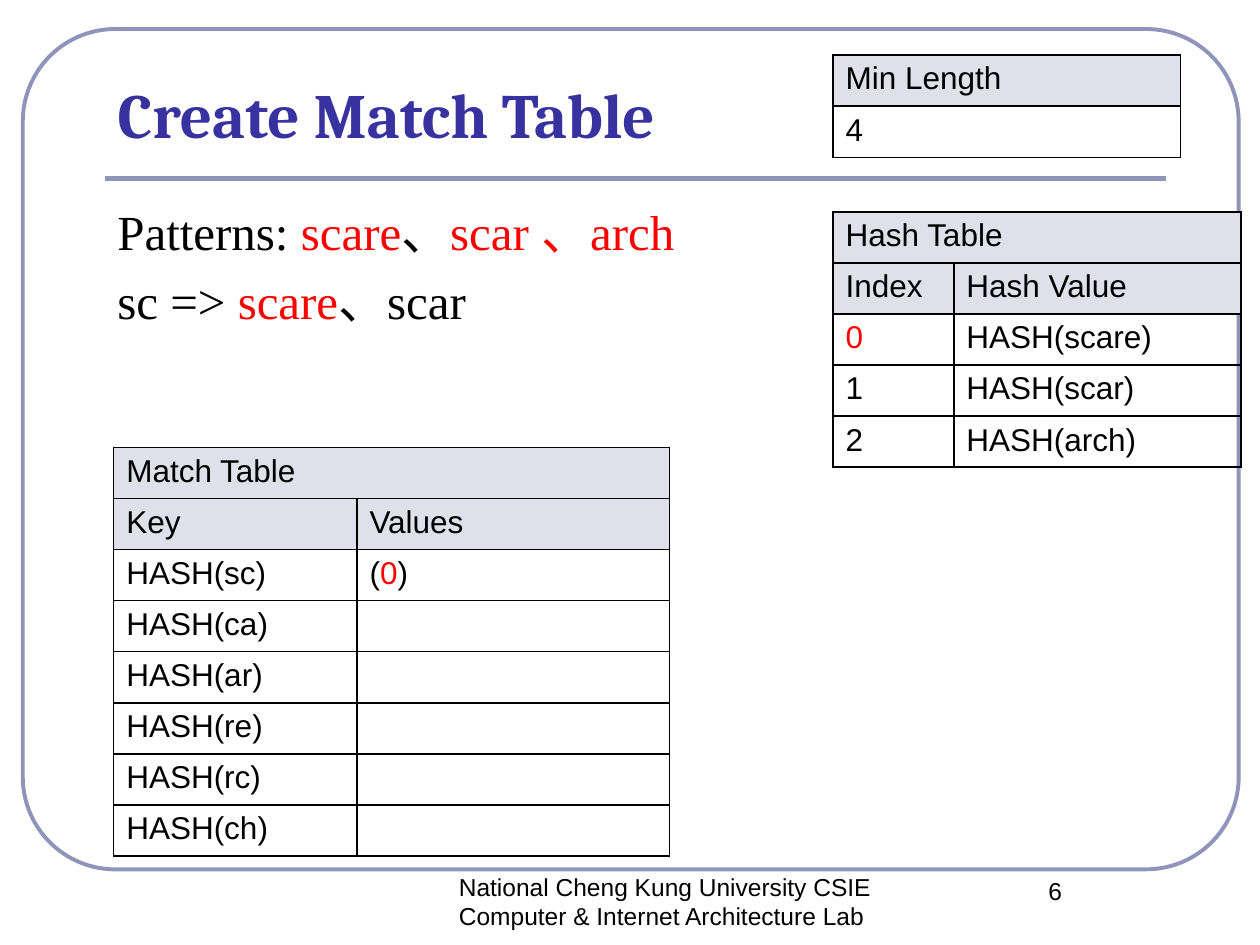
from lxml.etree import SubElement
from pptx import Presentation
from pptx.dml.color import RGBColor
from pptx.enum.shapes import MSO_CONNECTOR, MSO_SHAPE
from pptx.enum.text import MSO_ANCHOR, MSO_AUTO_SIZE, PP_ALIGN
from pptx.oxml.ns import qn
from pptx.util import Pt

BLACK, RED, INDIGO, FRAME, HEADER = "000000", "FF0000", "3732A0", "9094B8", "E0E0EB"
ROW_HEIGHT = 29.2


def color(value):
    return RGBColor.from_string(value)


def box_pt(box):
    return [Pt(v) for v in box]


def add_runs(p, parts, size, font):
    """Fill a paragraph from plain text or a list of (text, colour) pairs."""
    if isinstance(parts, str):
        parts = [(parts, BLACK)]
    for text, fill in parts:
        r = p.add_run()
        r.text = text
        r.font.size = Pt(size)
        r.font.name = font
        r.font.color.rgb = color(fill)


def add_frame(s, box):
    sp = s.shapes.add_shape(MSO_SHAPE.ROUNDED_RECTANGLE, *box_pt(box))
    sp.adjustments[0] = 0.11
    sp.shadow.inherit = False
    sp.fill.background()
    sp.line.color.rgb = color(FRAME)
    sp.line.width = Pt(2.25)


def add_rule(s, left, right, y):
    line = s.shapes.add_connector(MSO_CONNECTOR.STRAIGHT, Pt(left), Pt(y), Pt(right), Pt(y))
    line.line.color.rgb = color(FRAME)
    line.line.width = Pt(3)
    SubElement(line._element.spPr, qn("a:effectLst"))


def set_title(s, box, text):
    title = s.shapes.title
    title.left, title.top, title.width, title.height = box_pt(box)
    tf = title.text_frame
    tf.text = text
    tf.auto_size = MSO_AUTO_SIZE.NONE
    tf.vertical_anchor = MSO_ANCHOR.BOTTOM
    p = tf.paragraphs[0]
    p.alignment = PP_ALIGN.LEFT
    font = p.runs[0].font
    font.name, font.size, font.bold = "Cambria", Pt(36), True
    font.color.rgb = color(INDIGO)


def add_text(s, box, lines, size, font, align=PP_ALIGN.LEFT, space_before=0):
    tf = s.shapes.add_textbox(*box_pt(box)).text_frame
    tf.word_wrap = True
    for i, parts in enumerate(lines):
        p = tf.add_paragraph() if i else tf.paragraphs[0]
        p.alignment = align
        p.space_before = Pt(space_before)
        add_runs(p, parts, size, font)


def add_borders(cell):
    tc_pr = cell._tc.get_or_add_tcPr()
    for side in ("lnL", "lnR", "lnT", "lnB"):
        ln = SubElement(tc_pr, qn(f"a:{side}"), w=str(Pt(1)))
        fill = SubElement(ln, qn("a:solidFill"))
        SubElement(fill, qn("a:srgbClr"), val=BLACK)


def add_grid(s, left, top, widths, rows, header_rows):
    """Place a bordered table; a short first row spans all columns."""
    table = s.shapes.add_table(len(rows), len(widths), Pt(left), Pt(top),
                               Pt(sum(widths)), Pt(ROW_HEIGHT * len(rows))).table
    table.first_row = table.horz_banding = False
    for column, width in zip(table.columns, widths):
        column.width = Pt(width)
    for i, row in enumerate(rows):
        table.rows[i].height = Pt(ROW_HEIGHT)
        for j in range(len(widths)):
            cell = table.cell(i, j)
            add_borders(cell)
            if i < header_rows:
                cell.fill.solid()
                cell.fill.fore_color.rgb = color(HEADER)
            else:
                cell.fill.background()
            if j < len(row) and row[j]:
                add_runs(cell.text_frame.paragraphs[0], row[j], 18, "Arial")
    if len(rows[0]) < len(widths):
        table.cell(0, 0).merge(table.cell(0, len(widths) - 1))


def main():
    prs = Presentation()
    prs.slide_width, prs.slide_height = Pt(720), Pt(540)
    s = prs.slides.add_slide(prs.slide_layouts[5])

    # Frame, title and rule
    add_frame(s, (13, 16.6, 694.8, 480.2))
    add_rule(s, 60, 666, 101.8)
    set_title(s, (60, 43.2, 606, 46.8), "Create Match Table")

    # Footer and slide number
    add_text(s, (224, 494.6, 312, 36),
             ["National Cheng Kung University CSIE Computer & Internet Architecture Lab "],
             14, "Arial", PP_ALIGN.CENTER)
    add_text(s, (540, 496.8, 126, 36), ["6"], 14, "Arial", PP_ALIGN.CENTER)

    # Patterns
    patterns = [
        [("Patterns: ", BLACK), ("scare", RED), ("、", BLACK), ("scar 、arch", RED)],
        [("sc => ", BLACK), ("scare", RED), ("、scar", BLACK)],
    ]
    add_text(s, (60, 111.6, 606, 356.4), patterns, 28, "Times New Roman", space_before=5.6)

    # Match, length and hash tables
    matches = [["Match Table"], ["Key", "Values"],
               ["HASH(sc)", [("(", BLACK), ("0", RED), (")", BLACK)]]]
    matches += [[f"HASH({key})", ""] for key in ("ca", "ar", "re", "rc", "ch")]
    add_grid(s, 65, 255.6, (139, 178.6), matches, 2)
    add_grid(s, 476, 31.5, (198.7,), [["Min Length"], ["4"]], 1)
    hashes = [["Hash Table"], ["Index", "Hash Value"], [[("0", RED)], "HASH(scare)"],
              ["1", "HASH(scar)"], ["2", "HASH(arch)"]]
    add_grid(s, 476, 121, (69.1, 164.2), hashes, 2)

    prs.save("out.pptx")


if __name__ == "__main__":
    main()
